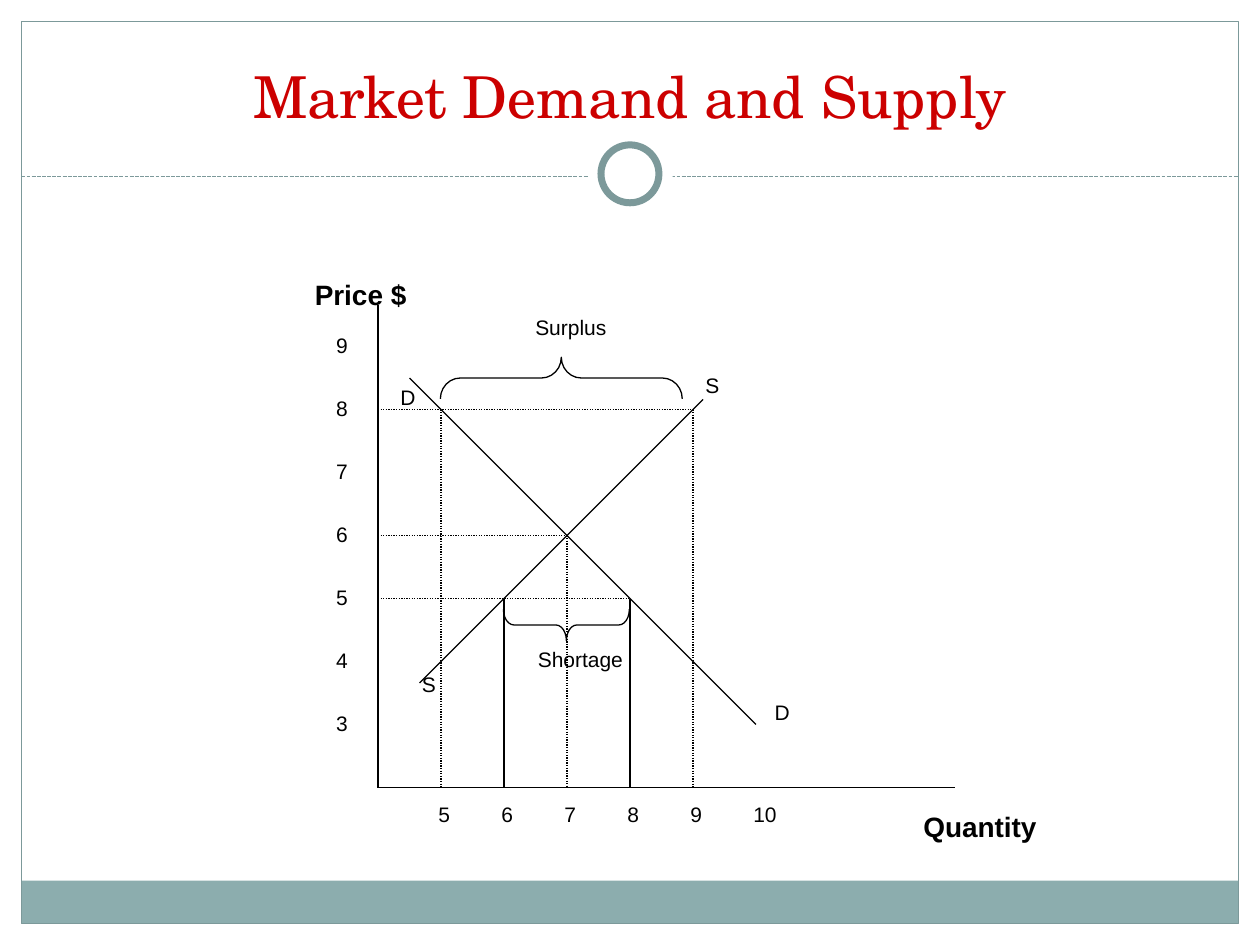
"""Build the market demand and supply slide."""
from typing import NamedTuple

from lxml import etree
from pptx import Presentation
from pptx.dml.color import RGBColor
from pptx.enum import dml, shapes, text
from pptx.oxml.ns import qn
from pptx.util import Inches, Pt

BLACK = RGBColor(0x00, 0x00, 0x00)
WHITE = RGBColor(0xFF, 0xFF, 0xFF)
RED = RGBColor(0xCC, 0x00, 0x00)
TEAL = RGBColor(0x7C, 0x99, 0x9A)
BAND = RGBColor(0x8C, 0xAD, 0xAE)
DASH = dml.MSO_LINE.SQUARE_DOT
DOT = dml.MSO_LINE.ROUND_DOT
SHAPE = shapes.MSO_SHAPE
ORIGIN_X, ORIGIN_Y, STEP = 3, 6.25, 0.5


class Label(NamedTuple):
    text: str
    x: float
    y: float
    w: float
    size: int = 12
    bold: bool = False


class Line(NamedTuple):
    x1: float
    y1: float
    x2: float
    y2: float
    dash: dml.MSO_LINE | None = None
    color: RGBColor = BLACK


class Brace(NamedTuple):
    x: float
    y: float
    w: float
    h: float
    rotation: int
    curve: float


def quantity_x(quantity: float) -> float:
    return ORIGIN_X + STEP * (quantity - 4)


def price_y(price: float) -> float:
    return 3.25 + STEP * (8 - price)


def write(tf, content: str, *, size: float, font: str = "Arial", color: RGBColor = BLACK,
          bold: bool = False, align=text.PP_ALIGN.LEFT) -> None:
    p = tf.paragraphs[0]
    p.alignment = align
    r = p.add_run()
    r.text = content
    r.font.size, r.font.name, r.font.bold = Pt(size), font, bold
    r.font.color.rgb = color


def add_label(s, label: Label) -> None:
    height = 0.3 if label.size == 12 else 0.37
    box = s.shapes.add_textbox(*map(Inches, (label.x, label.y, label.w, height)))
    tf = box.text_frame
    tf.word_wrap = False
    tf.auto_size = text.MSO_AUTO_SIZE.SHAPE_TO_FIT_TEXT
    write(tf, label.text, size=label.size, bold=label.bold)


def add_line(s, line: Line) -> None:
    c = s.shapes.add_connector(shapes.MSO_CONNECTOR.STRAIGHT, *map(Inches, line[:4]))
    c.line.color.rgb, c.line.width = line.color, Pt(0.75)
    if line.dash:
        c.line.dash_style = line.dash
    etree.SubElement(c._element.spPr, qn("a:effectLst"))


def add_shape(s, kind, x: float, y: float, w: float, h: float, *,
              fill: RGBColor | None = None, line: RGBColor | None = None, width: float = 0.75):
    sp = s.shapes.add_shape(kind, *map(Inches, (x, y, w, h)))
    sp.shadow.inherit = False
    if fill is None:
        sp.fill.background()
    else:
        sp.fill.solid()
        sp.fill.fore_color.rgb = fill
    if line is None:
        sp.line.fill.background()
    else:
        sp.line.color.rgb, sp.line.width = line, Pt(width)
    return sp


def add_brace(s, brace: Brace) -> None:
    sp = add_shape(s, SHAPE.RIGHT_BRACE, *brace[:4], line=BLACK)
    sp.rotation = brace.rotation
    sp.adjustments[0] = brace.curve


def add_frame(s) -> None:
    add_shape(s, SHAPE.RECTANGLE, 0.17, 6.99, 9.66, 0.34, fill=BAND)
    add_shape(s, SHAPE.RECTANGLE, 0.17, 0.17, 9.66, 7.16, line=TEAL)
    add_line(s, Line(0.17, 1.4, 9.83, 1.4, DASH, TEAL))
    add_shape(s, SHAPE.OVAL, 4.67, 1.05, 0.67, 0.67, fill=WHITE)
    add_shape(s, SHAPE.OVAL, 4.77, 1.15, 0.46, 0.46, fill=WHITE, line=TEAL, width=4)


def add_title(s, content: str) -> None:
    title = s.shapes.title
    title.left, title.top, title.width, title.height = map(Inches, (0.75, -0.17, 8.5, 1.25))
    tf = title.text_frame
    tf.vertical_anchor = text.MSO_ANCHOR.BOTTOM
    write(tf, content, size=33, font="TeX Gyre Schola", color=RED, align=text.PP_ALIGN.CENTER)


def add_diagram(s) -> None:
    axes = [Line(ORIGIN_X, 2.42, ORIGIN_X, ORIGIN_Y), Line(ORIGIN_X, ORIGIN_Y, 7.58, ORIGIN_Y)]
    curves = [Line(3.25, 3, 6, 5.75), Line(5.58, 3.17, 3.33, 5.42)]
    drops = [Line(quantity_x(q), price_y(p), quantity_x(q), ORIGIN_Y, dash)
             for q, p, dash in ((5, 8, DOT), (7, 6, DOT), (9, 8, DOT), (6, 5, None), (8, 5, None))]
    levels = [Line(ORIGIN_X, price_y(p), quantity_x(q), price_y(p), DOT)
              for q, p in ((7, 6), (9, 8), (8, 5))]
    for line in axes + curves + drops + levels:
        add_line(s, line)

    for brace in (Brace(4.29, 2.04, 0.33, 1.92, 270, 0.479),
                  Brace(4.37, 4.46, 0.25, 1, 90, 0.333)):
        add_brace(s, brace)

    quantities = [Label(str(q), quantity_x(q) - 0.12, 6.31, 0.29 if q < 10 else 0.39)
                  for q in range(5, 11)]
    prices = [Label(str(p), 2.57, price_y(p) - 0.16, 0.29) for p in range(3, 10)]
    names = [
        Label("Price $", 2.4, 2.15, 0.95, 16, True),
        Label("Quantity", 7.23, 6.38, 1.12, 16, True),
        Label("D", 6.05, 5.5, 0.32),
        Label("D", 3.08, 3, 0.32),
        Label("S", 5.5, 2.91, 0.31),
        Label("S", 3.25, 5.28, 0.31),
        Label("Surplus", 4.15, 2.45, 0.8),
        Label("Shortage", 4.17, 5.08, 0.9),
    ]
    for label in quantities + prices + names:
        add_label(s, label)


def main() -> None:
    prs = Presentation()
    prs.slide_width, prs.slide_height = Inches(10), Inches(7.5)
    s = prs.slides.add_slide(prs.slide_layouts[5])
    add_frame(s)
    add_title(s, "Market Demand and Supply")
    add_diagram(s)
    prs.save("out.pptx")


if __name__ == "__main__":
    main()
